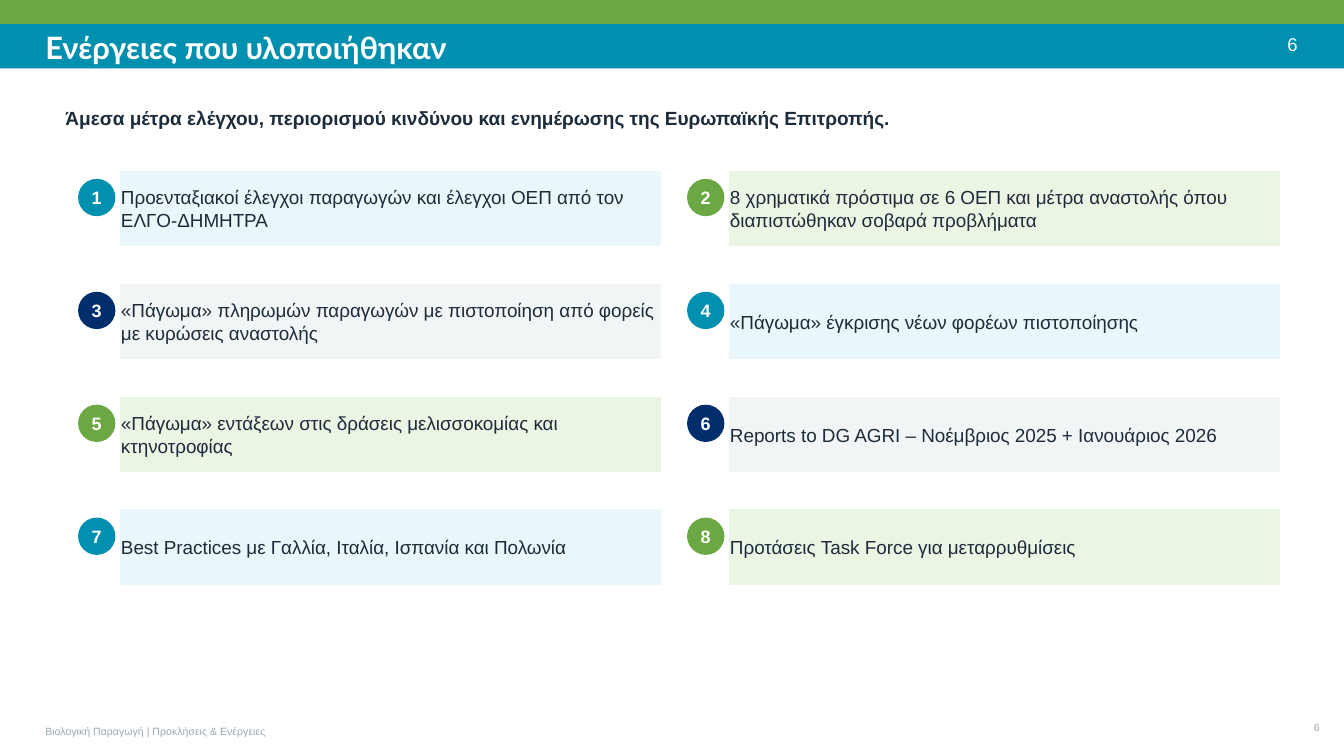
from dataclasses import dataclass

from pptx import Presentation
from pptx.dml.color import RGBColor
from pptx.enum.shapes import MSO_SHAPE
from pptx.enum.text import MSO_ANCHOR, MSO_AUTO_SIZE, PP_ALIGN
from pptx.util import Inches, Pt

RECTANGLE, OVAL = MSO_SHAPE.RECTANGLE, MSO_SHAPE.OVAL
MIDDLE, NO_AUTOFIT = MSO_ANCHOR.MIDDLE, MSO_AUTO_SIZE.NONE
LEFT, CENTER, RIGHT = PP_ALIGN.LEFT, PP_ALIGN.CENTER, PP_ALIGN.RIGHT


@dataclass(frozen=True)
class Theme:
    heading_font: str = "Lato"
    body_font: str = "Arial"
    teal: str = "0090AF"
    green: str = "6BA843"
    navy: str = "002E6D"
    pale_teal: str = "E9F6FA"
    pale_green: str = "EAF5E4"
    pale_grey: str = "F2F5F6"
    ink: str = "1D2C3B"
    muted: str = "9BA8AF"
    white: str = "FFFFFF"
    title_size: float = 22
    page_size: float = 13.2
    lead_size: float = 13.6
    badge_size: float = 12.8
    action_size: float = 13.5
    footer_size: float = 7.5


THEME = Theme()


def write(shape, text, size, color, bold=False, align=LEFT, font=THEME.body_font):
    frame = shape.text_frame
    frame.text = text
    frame.word_wrap = True
    frame.auto_size = NO_AUTOFIT
    frame.vertical_anchor = MIDDLE
    frame.margin_left = frame.margin_right = 0
    frame.margin_top = frame.margin_bottom = 0
    paragraph = frame.paragraphs[0]
    paragraph.alignment = align
    run_font = paragraph.runs[0].font
    run_font.name = font
    run_font.size = Pt(size)
    run_font.bold = bold
    run_font.color.rgb = RGBColor.from_string(color)


def add_block(kind, left, top, width, height, color, outlined=True):
    block = slide.shapes.add_shape(
        kind, Inches(left), Inches(top), Inches(width), Inches(height))
    block.shadow.inherit = False
    block.fill.solid()
    block.fill.fore_color.rgb = RGBColor.from_string(color)
    if outlined:
        block.line.color.rgb = RGBColor.from_string(color)
        block.line.width = Pt(0.75)
    else:
        block.line.fill.background()
    return block


presentation = Presentation()
presentation.slide_width = Inches(13.33)
presentation.slide_height = Inches(7.5)
slide = presentation.slides.add_slide(presentation.slide_layouts[5])

# Header bands, with the title brought in front of them
add_block(RECTANGLE, 0, 0, 13.33, 0.24, THEME.green, outlined=False)
add_block(RECTANGLE, 0, 0.24, 13.33, 0.44, THEME.teal, outlined=False)
title = slide.shapes.title
slide.shapes.element.append(title.element)
title.left, title.top = Inches(0.45), Inches(0.26)
title.width, title.height = Inches(10.6), Inches(0.42)
write(title, "Ενέργειες που υλοποιήθηκαν", THEME.title_size, THEME.white,
      bold=True, font=THEME.heading_font)

# Page numbers, lead sentence and footer
captions = [
    (12.55, 0.32, 0.32, 0.24, "6", THEME.page_size, THEME.white, False, RIGHT),
    (0.65, 0.94, 11.5, 0.45,
     "Άμεσα μέτρα ελέγχου, περιορισμού κινδύνου και ενημέρωσης της Ευρωπαϊκής Επιτροπής.",
     THEME.lead_size, THEME.ink, True, LEFT),
    (0.45, 7.19, 3.8, 0.14, "Βιολογική Παραγωγή | Προκλήσεις & Ενέργειες",
     THEME.footer_size, THEME.muted, False, LEFT),
    (12.85, 7.15, 0.24, 0.14, "6", THEME.footer_size, THEME.muted, False, RIGHT),
]
for left, top, width, height, text, size, color, bold, align in captions:
    caption = slide.shapes.add_textbox(
        Inches(left), Inches(top), Inches(width), Inches(height))
    write(caption, text, size, color, bold, align)

# Numbered actions in two columns, colours cycling in threes
actions = [
    "Προενταξιακοί έλεγχοι παραγωγών και έλεγχοι ΟΕΠ από τον ΕΛΓΟ-ΔΗΜΗΤΡΑ",
    "8 χρηματικά πρόστιμα σε 6 ΟΕΠ και μέτρα αναστολής όπου διαπιστώθηκαν σοβαρά προβλήματα",
    "«Πάγωμα» πληρωμών παραγωγών με πιστοποίηση από φορείς με κυρώσεις αναστολής",
    "«Πάγωμα» έγκρισης νέων φορέων πιστοποίησης",
    "«Πάγωμα» εντάξεων στις δράσεις μελισσοκομίας και κτηνοτροφίας",
    "Reports to DG AGRI – Νοέμβριος 2025 + Ιανουάριος 2026",
    "Best Practices με Γαλλία, Ιταλία, Ισπανία και Πολωνία",
    "Προτάσεις Task Force για μεταρρυθμίσεις",
]
color_pairs = [
    (THEME.teal, THEME.pale_teal),
    (THEME.green, THEME.pale_green),
    (THEME.navy, THEME.pale_grey),
]
columns = [(0.78, 5.35), (6.82, 5.45)]  # badge left, panel width
FIRST_ROW, ROW_PITCH = 1.7, 1.12

for index, action in enumerate(actions):
    row, column = divmod(index, len(columns))
    badge_left, panel_width = columns[column]
    top = FIRST_ROW + row * ROW_PITCH
    strong, pale = color_pairs[index % len(color_pairs)]
    badge = add_block(OVAL, badge_left, top + 0.08, 0.36, 0.36, strong)
    write(badge, str(index + 1), THEME.badge_size, THEME.white, bold=True, align=CENTER)
    panel = add_block(RECTANGLE, badge_left + 0.42, top, panel_width, 0.74, pale)
    write(panel, action, THEME.action_size, THEME.ink)

presentation.save("out.pptx")
